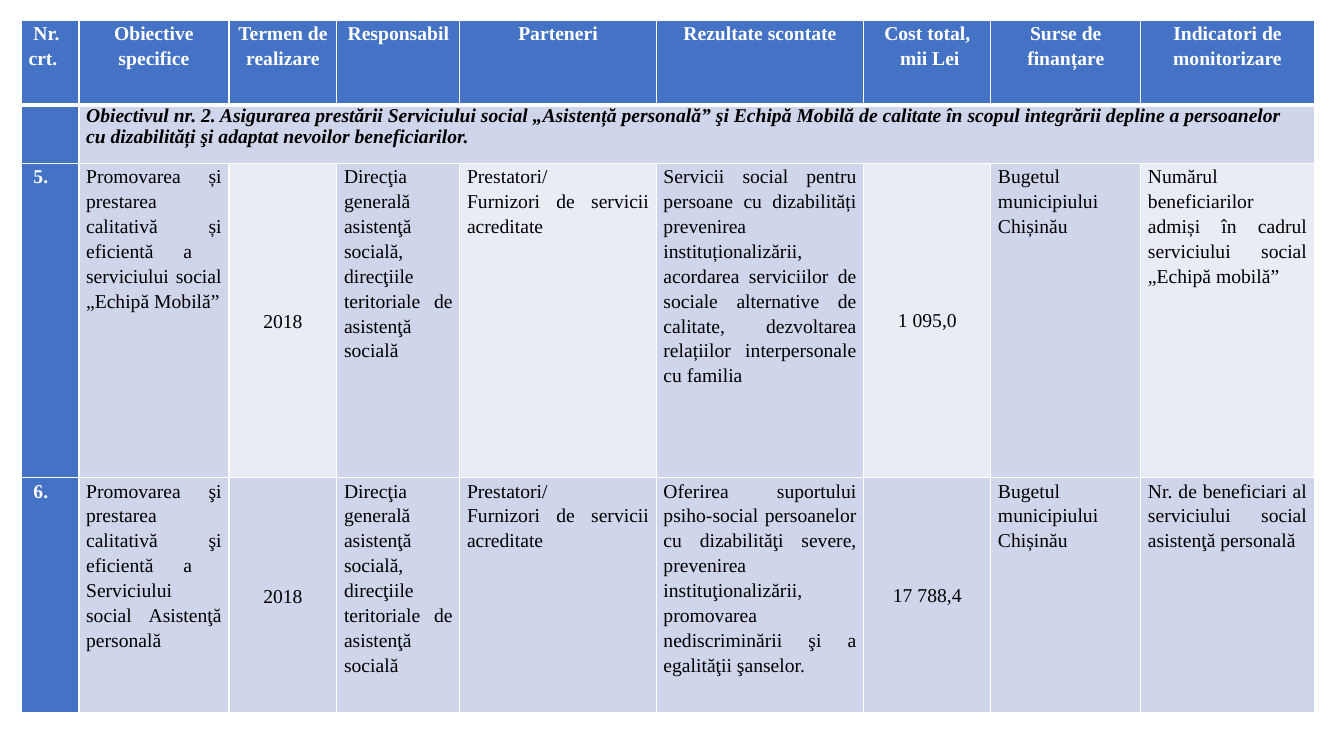
from dataclasses import dataclass

from lxml.etree import SubElement
from pptx import Presentation
from pptx.dml.color import RGBColor
from pptx.enum.text import MSO_ANCHOR as Anchor, PP_ALIGN as Align
from pptx.oxml.ns import qn
from pptx.util import Cm, Pt

# Content
HEADERS = ["\u00a0Nr.\ncrt.".replace("\u00a0", " "), "Obiective specifice", "Termen de realizare",
           "Responsabil", "Parteneri", "Rezultate scontate", "Cost total,\n mii Lei",
           "Surse de finanțare", "Indicatori de monitorizare"]
OBJECTIVE = ("Obiectivul nr. 2. Asigurarea prestării Serviciului social „Asistență personală” "
             "şi Echipă Mobilă de calitate în scopul integrării depline a persoanelor "
             "cu dizabilități şi adaptat nevoilor beneficiarilor.")
RESPONSIBLE = ("Direcţia generală asistenţă socială, direcţiile teritoriale "
               "de asistenţă socială")
PARTNERS = "Prestatori/\nFurnizori de servicii acreditate"
FUNDING = "Bugetul municipiului Chișinău"
ACTIVITIES = [
    [" 5.",
     "Promovarea și prestarea calitativă și eficientă a  serviciului social „Echipă Mobilă”",
     "2018", RESPONSIBLE, PARTNERS,
     "Servicii social pentru persoane cu dizabilități prevenirea instituționalizării, "
     "acordarea serviciilor de sociale alternative de calitate, dezvoltarea relațiilor "
     "interpersonale cu familia",
     "1 095,0", FUNDING,
     "Numărul beneficiarilor admiși în cadrul serviciului social „Echipă mobilă”"],
    [" 6.",
     "Promovarea şi prestarea calitativă şi eficientă a  Serviciului social Asistenţă personală",
     "2018", RESPONSIBLE, PARTNERS,
     "Oferirea suportului psiho-social persoanelor cu dizabilităţi severe, prevenirea "
     "instituţionalizării, promovarea nediscriminării şi a egalităţii şanselor.",
     "17 788,4", FUNDING,
     "Nr. de beneficiari al serviciului social asistenţă personală"],
]
COLUMN_WIDTHS = [1.45, 3.78, 2.72, 3.1, 4.95, 5.23, 3.2, 3.78, 4.37]
ROW_HEIGHTS = [2.13, 1.47, 7.92, 5.92]
NUMBER, TERM, COST = 0, 2, 6
HEADER_ROW, OBJECTIVE_ROW, FIRST_ACTIVITY = 0, 1, 2


@dataclass(frozen=True)
class Theme:
    font: str = "Times New Roman"
    size: int = 14
    spacing: float = 1.15
    blue: str = "4472C4"
    band: str = "CFD5EA"
    light: str = "E9EBF5"
    white: str = "FFFFFF"
    black: str = "000000"
    line: int = 1
    header_line: int = 3


THEME = Theme()


def set_borders(cell, bottom):
    properties = cell._tc.get_or_add_tcPr()
    for side in ("lnL", "lnR", "lnT", "lnB"):
        width = bottom if side == "lnB" else THEME.line
        line = SubElement(properties, qn(f"a:{side}"), w=str(Pt(width)))
        fill = SubElement(line, qn("a:solidFill"))
        SubElement(fill, qn("a:srgbClr"), val=THEME.white)


def cell_fill(row, column):
    if row == HEADER_ROW or column == NUMBER:
        return THEME.blue
    if row == FIRST_ACTIVITY and column % 2 == 0:
        return THEME.light
    return THEME.band


def cell_align(row, column):
    if column == NUMBER or row == OBJECTIVE_ROW:
        return Align.LEFT
    if row == HEADER_ROW or column in (TERM, COST):
        return Align.CENTER
    return Align.JUSTIFY


def format_cell(cell, row, column, text):
    is_heading = row == HEADER_ROW or column == NUMBER
    is_objective = row == OBJECTIVE_ROW
    is_cost = row >= FIRST_ACTIVITY and column == COST
    set_borders(cell, THEME.header_line if row == HEADER_ROW else THEME.line)
    cell.fill.solid()
    cell.fill.fore_color.rgb = RGBColor.from_string(cell_fill(row, column))
    cell.margin_left = cell.margin_right = Cm(0.03 if is_cost else 0.18)
    cell.margin_top = Cm(0.03 if is_cost else 0)
    cell.margin_bottom = Cm(0)
    centred = row >= FIRST_ACTIVITY and column in (TERM, COST)
    cell.vertical_anchor = Anchor.MIDDLE if centred else Anchor.TOP
    cell.text_frame.text = text
    for para in cell.text_frame.paragraphs:
        para.alignment = cell_align(row, column)
        para.line_spacing = 1.0 if is_cost or is_objective else THEME.spacing
        for span in para.runs:
            span.font.name = THEME.font
            span.font.size = Pt(THEME.size)
            span.font.bold = is_heading or is_objective
            span.font.italic = is_objective
            color = THEME.white if is_heading else THEME.black
            span.font.color.rgb = RGBColor.from_string(color)


def main():
    deck = Presentation()
    deck.slide_width, deck.slide_height = Cm(33.87), Cm(19.05)
    page = deck.slides.add_slide(deck.slide_layouts[6])

    # Table grid
    rows = [HEADERS, ["", OBJECTIVE] + [""] * 7, *ACTIVITIES]
    table = page.shapes.add_table(len(rows), len(HEADERS), Cm(0.54), Cm(0.51),
                                  Cm(sum(COLUMN_WIDTHS)), Cm(sum(ROW_HEIGHTS))).table
    for column, width in zip(table.columns, COLUMN_WIDTHS):
        column.width = Cm(width)
    for row, height in zip(table.rows, ROW_HEIGHTS):
        row.height = Cm(height)
    table.cell(OBJECTIVE_ROW, 1).merge(table.cell(OBJECTIVE_ROW, len(HEADERS) - 1))

    # Cell text and looks
    for row, texts in enumerate(rows):
        for column, text in enumerate(texts):
            format_cell(table.cell(row, column), row, column, text)

    deck.save("out.pptx")


if __name__ == "__main__":
    main()
